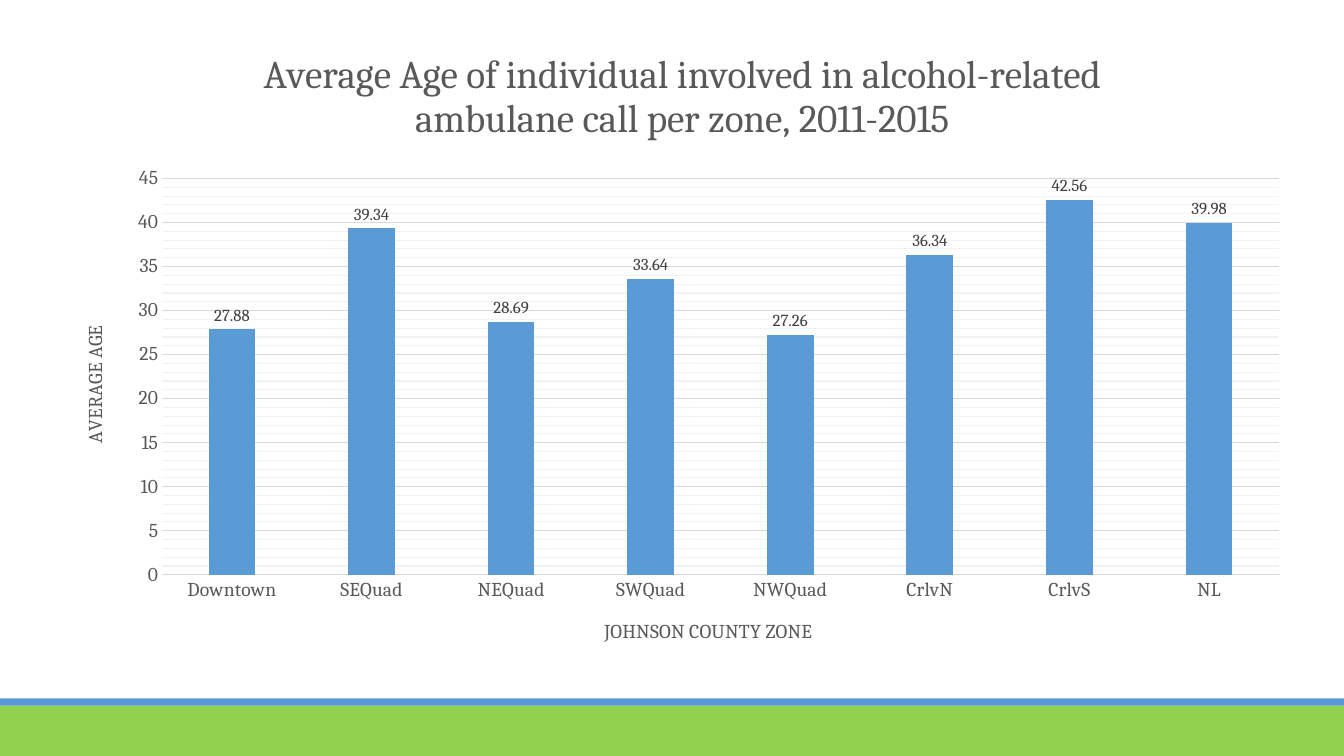
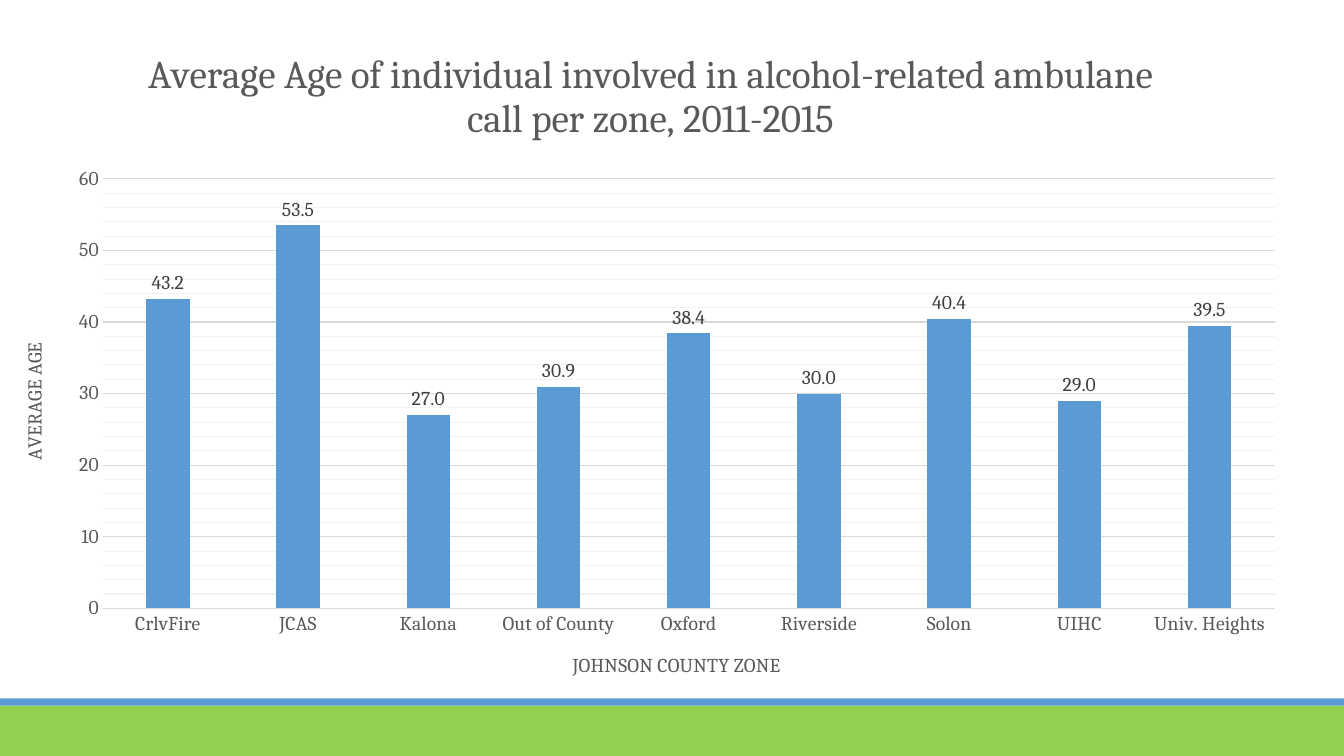
from copy import deepcopy
from dataclasses import dataclass

from pptx import Presentation
from pptx.chart.axis import CategoryAxis, ValueAxis
from pptx.chart.chart import Chart
from pptx.chart.data import CategoryChartData
from pptx.dml.color import RGBColor
from pptx.dml.line import LineFormat
from pptx.enum.chart import XL_CHART_TYPE, XL_LABEL_POSITION, XL_TICK_MARK
from pptx.enum.shapes import MSO_SHAPE
from pptx.slide import Slide, SlideLayout
from pptx.text.text import Font, TextFrame
from pptx.util import Inches, Pt

GREEN = RGBColor(0x92, 0xD0, 0x50)
BLUE = RGBColor(0x5B, 0x9B, 0xD5)
GRAY = RGBColor(0x59, 0x59, 0x59)
DARK = RGBColor(0x40, 0x40, 0x40)
GRID = RGBColor(0xD9, 0xD9, 0xD9)
PALE = RGBColor(0xF2, 0xF2, 0xF2)

FACE = "Cambria"
WIDTH = 13.33
TITLE = (
    "Average Age of individual involved in alcohol-related "
    "ambulane call per zone, 2011-2015"
)


@dataclass(frozen=True)
class Band:
    top: float
    height: float
    color: RGBColor


@dataclass(frozen=True)
class Plot:
    box: tuple[float, float, float, float]
    ages: dict[str, float]
    top: int
    major: int
    minor: int
    size: int
    code: str


BANDS = (Band(7, 0.5, GREEN), Band(6.93, 0.07, BLUE))

PLOTS = (
    Plot(
        box=(0.6, 0.24, 12.33, 6.37),
        ages={
            "Downtown": 27.88,
            "SEQuad": 39.34,
            "NEQuad": 28.69,
            "SWQuad": 33.64,
            "NWQuad": 27.26,
            "CrlvN": 36.34,
            "CrlvS": 42.56,
            "NL": 39.98,
        },
        top=45,
        major=5,
        minor=1,
        size=12,
        code="0.00",
    ),
    Plot(
        box=(0, 0.23, 12.9, 6.72),
        ages={
            "CrlvFire": 43.2,
            "JCAS": 53.5,
            "Kalona": 27,
            "Out of County": 30.9,
            "Oxford": 38.4,
            "Riverside": 30,
            "Solon": 40.4,
            "UIHC": 29,
            "Univ. Heights": 39.5,
        },
        top=60,
        major=10,
        minor=2,
        size=14,
        code="0.0",
    ),
)


def apply(target: object, values: dict[str, object]) -> None:
    for name, value in values.items():
        setattr(target, name, value)


def style(font: Font, size: int, color: RGBColor) -> None:
    apply(font, {"name": FACE, "size": Pt(size), "bold": False})
    font.color.rgb = color


def write(frame: TextFrame, text: str, size: int) -> None:
    frame.text = text
    style(frame.paragraphs[0].runs[0].font, size, GRAY)


def rule(line: LineFormat, color: RGBColor) -> None:
    line.color.rgb = color
    line.width = Pt(0.75)


def add_bands(slide: Slide, layout: SlideLayout) -> None:
    for holder in list(layout.placeholders):
        layout.shapes.element.remove(holder.element)
    for band in BANDS:
        shape = slide.shapes.add_shape(
            MSO_SHAPE.RECTANGLE,
            0, Inches(band.top), Inches(WIDTH), Inches(band.height),
        )
        shape.shadow.inherit = False
        shape.fill.solid()
        shape.fill.fore_color.rgb = band.color
        shape.line.fill.background()
        layout.shapes.element.append(shape.element)


def set_axis(axis: CategoryAxis | ValueAxis, title: str) -> None:
    apply(axis, {
        "major_tick_mark": XL_TICK_MARK.NONE,
        "minor_tick_mark": XL_TICK_MARK.NONE,
    })
    write(axis.axis_title.text_frame, title, 14)
    style(axis.tick_labels.font, 14, GRAY)


def set_scale(chart: Chart, plot: Plot) -> None:
    axis = chart.value_axis
    apply(axis, {
        "minimum_scale": 0,
        "maximum_scale": plot.top,
        "major_unit": plot.major,
        "minor_unit": plot.minor,
        "has_major_gridlines": True,
        "has_minor_gridlines": True,
    })
    rule(axis.major_gridlines.format.line, GRID)
    root = chart.element
    look = deepcopy(root.xpath("//c:majorGridlines/c:spPr")[0])
    for color in look.xpath(".//a:srgbClr"):
        color.set("val", str(PALE))
    root.xpath("//c:minorGridlines")[0].append(look)
    axis.format.line.fill.background()
    apply(axis.tick_labels, {
        "number_format": "0", "number_format_is_linked": False,
    })


def set_bars(chart: Chart, plot: Plot) -> None:
    bars = chart.plots[0]
    apply(bars, {
        "gap_width": 199, "vary_by_categories": False, "has_data_labels": True,
    })
    fill = bars.series[0].format.fill
    fill.solid()
    fill.fore_color.rgb = BLUE
    labels = bars.data_labels
    apply(labels, {
        "show_value": True,
        "position": XL_LABEL_POSITION.OUTSIDE_END,
        "number_format": plot.code,
        "number_format_is_linked": False,
    })
    style(labels.font, plot.size, DARK)


def add_plot(slide: Slide, plot: Plot) -> None:
    data = CategoryChartData()
    data.categories = list(plot.ages)
    data.add_series("Series 1", list(plot.ages.values()))
    chart = slide.shapes.add_chart(
        XL_CHART_TYPE.COLUMN_CLUSTERED, *map(Inches, plot.box), data
    ).chart
    apply(chart, {"has_legend": False, "has_title": True})
    apply(chart.font, {"name": FACE, "size": Pt(10)})
    write(chart.chart_title.text_frame, TITLE, 28)
    set_axis(chart.category_axis, "JOHNSON COUNTY ZONE")
    rule(chart.category_axis.format.line, GRID)
    set_axis(chart.value_axis, "AVERAGE AGE")
    set_scale(chart, plot)
    set_bars(chart, plot)


def main() -> None:
    deck = Presentation()
    apply(deck, {"slide_width": Inches(WIDTH), "slide_height": Inches(7.5)})
    layout = deck.slide_layouts[6]
    slides = [deck.slides.add_slide(layout) for _ in PLOTS]
    add_bands(slides[0], layout)
    for slide, plot in zip(slides, PLOTS):
        add_plot(slide, plot)
    deck.save("out.pptx")


if __name__ == "__main__":
    main()
